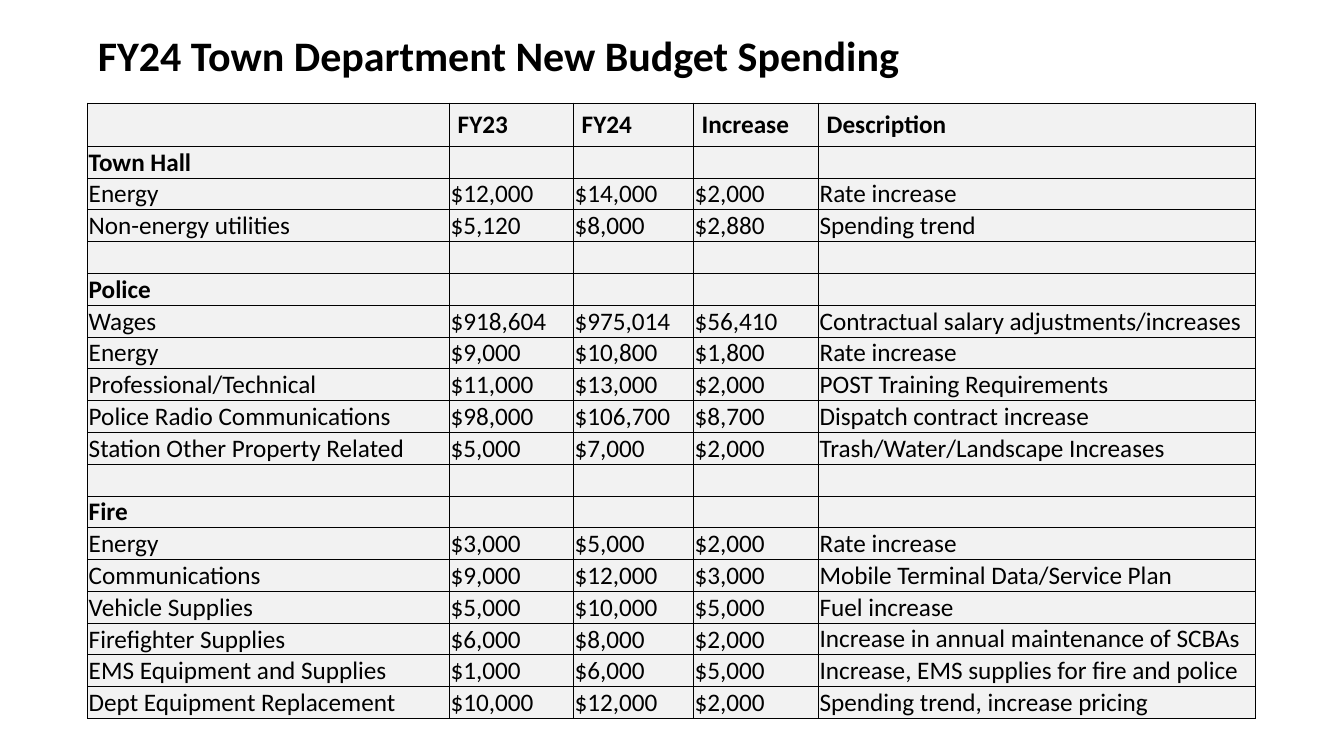
from dataclasses import dataclass

from lxml import etree
from pptx import Presentation
from pptx.dml.color import RGBColor
from pptx.enum.text import MSO_ANCHOR, PP_ALIGN
from pptx.oxml.ns import qn
from pptx.table import Table, _Cell
from pptx.text.text import TextFrame
from pptx.util import Inches, Pt

LEFT = PP_ALIGN.LEFT
TOP, MIDDLE, BOTTOM = MSO_ANCHOR.TOP, MSO_ANCHOR.MIDDLE, MSO_ANCHOR.BOTTOM
COLORS = {"text": "000000", "border": "000000", "cell": "F2F2F2"}
FONT = "Calibri"
TITLE_ONLY_LAYOUT = 5

COLUMN_WIDTHS = (3.59, 1.23, 1.19, 1.24, 4.33)
HEADER_HEIGHT, ROW_HEIGHT = 0.43, 0.31
BORDER_WIDTH = Pt(0.5)
HEADER_MARGINS = (0.08, 0.06, 0.01, 0.06)
BODY_MARGINS = (0.01, 0.01, 0.01, 0)


@dataclass
class Item:
    name: str
    fy23: str
    fy24: str
    increase: str
    description: str
    description_anchor: MSO_ANCHOR = BOTTOM


@dataclass
class Department:
    name: str
    items: list[Item]


@dataclass
class Row:
    texts: tuple[str, ...]
    bold: bool = False
    margins: tuple[float, ...] = BODY_MARGINS
    last_anchor: MSO_ANCHOR = BOTTOM


HEADINGS = ("", "FY23", "FY24", "Increase", "Description")
DEPARTMENTS = [
    Department("Town Hall", [
        Item("Energy", "$12,000", "$14,000", "$2,000", "Rate increase"),
        Item("Non-energy utilities", "$5,120", "$8,000", "$2,880", "Spending trend"),
    ]),
    Department("Police", [
        Item("Wages", "$918,604", "$975,014", "$56,410",
             "Contractual salary adjustments/increases"),
        Item("Energy", "$9,000", "$10,800", "$1,800", "Rate increase"),
        Item("Professional/Technical", "$11,000", "$13,000", "$2,000",
             "POST Training Requirements"),
        Item("Police Radio Communications", "$98,000", "$106,700", "$8,700",
             "Dispatch contract increase"),
        Item("Station Other Property Related", "$5,000", "$7,000", "$2,000",
             "Trash/Water/Landscape Increases"),
    ]),
    Department("Fire", [
        Item("Energy", "$3,000", "$5,000", "$2,000", "Rate increase"),
        Item("Communications", "$9,000", "$12,000", "$3,000",
             "Mobile Terminal Data/Service Plan", TOP),
        Item("Vehicle Supplies", "$5,000", "$10,000", "$5,000", "Fuel increase"),
        Item("Firefighter Supplies", "$6,000", "$8,000", "$2,000",
             "Increase in annual maintenance of SCBAs", TOP),
        Item("EMS Equipment and Supplies", "$1,000", "$6,000", "$5,000",
             "Increase, EMS supplies for fire and police"),
        Item("Dept Equipment Replacement", "$10,000", "$12,000", "$2,000",
             "Spending trend, increase pricing"),
    ]),
]


def write_text(frame: TextFrame, text: str, *, size: float = 18, bold: bool = False,
               line_spacing: float | None = None, space_after: float | None = None) -> None:
    paragraph = frame.paragraphs[0]
    paragraph.alignment = LEFT
    if line_spacing is not None:
        paragraph.line_spacing = line_spacing
    if space_after is not None:
        paragraph.space_after = Pt(space_after)
    run = paragraph.add_run()
    run.text = text
    run.font.name = FONT
    run.font.size = Pt(size)
    run.font.bold = bold
    run.font.color.rgb = RGBColor.from_string(COLORS["text"])


def add_borders(cell: _Cell) -> None:
    properties = cell._tc.get_or_add_tcPr()
    for side in ("a:lnL", "a:lnR", "a:lnT", "a:lnB"):
        line = etree.SubElement(properties, qn(side), w=str(BORDER_WIDTH))
        fill = etree.SubElement(line, qn("a:solidFill"))
        etree.SubElement(fill, qn("a:srgbClr"), val=COLORS["border"])


def table_rows() -> list[Row]:
    """List the heading row, then the departments with an empty row between them."""
    rows = [Row(HEADINGS, bold=True, margins=HEADER_MARGINS)]
    empty = ("",) * len(HEADINGS)
    for index, department in enumerate(DEPARTMENTS):
        if index:
            rows.append(Row(empty))
        rows.append(Row((department.name, *empty[1:]), bold=True))
        for item in department.items:
            texts = (item.name, item.fy23, item.fy24, item.increase, item.description)
            rows.append(Row(texts, last_anchor=item.description_anchor))
    return rows


def fill_row(table: Table, row_index: int, row: Row) -> None:
    last_column = len(row.texts) - 1
    for column_index, text in enumerate(row.texts):
        cell = table.cell(row_index, column_index)
        add_borders(cell)
        cell.fill.solid()
        cell.fill.fore_color.rgb = RGBColor.from_string(COLORS["cell"])
        left, top, right, bottom = map(Inches, row.margins)
        cell.margin_left, cell.margin_top = left, top
        cell.margin_right, cell.margin_bottom = right, bottom
        cell.vertical_anchor = row.last_anchor if column_index == last_column else BOTTOM
        if text:
            write_text(cell.text_frame, text, bold=row.bold)


def main() -> None:
    presentation = Presentation()
    presentation.slide_width, presentation.slide_height = Inches(13.33), Inches(7.5)
    slide = presentation.slides.add_slide(presentation.slide_layouts[TITLE_ONLY_LAYOUT])

    # Title
    title = slide.shapes.title
    title.left, title.top = Inches(0.87), Inches(0.05)
    title.width, title.height = Inches(10.78), Inches(1.05)
    title.text_frame.vertical_anchor = MIDDLE
    write_text(title.text_frame, "FY24 Town Department New Budget Spending",
               size=30, bold=True, line_spacing=0.9, space_after=6)

    # Budget table
    rows = table_rows()
    height = HEADER_HEIGHT + ROW_HEIGHT * (len(rows) - 1)
    table = slide.shapes.add_table(
        len(rows), len(COLUMN_WIDTHS), Inches(0.87), Inches(1.02),
        Inches(sum(COLUMN_WIDTHS)), Inches(height)).table
    table.first_row = False
    table.horz_banding = False
    for column, width in zip(table.columns, COLUMN_WIDTHS):
        column.width = Inches(width)
    for index, row in enumerate(rows):
        table.rows[index].height = Inches(ROW_HEIGHT if index else HEADER_HEIGHT)
        fill_row(table, index, row)

    presentation.save("out.pptx")


if __name__ == "__main__":
    main()
